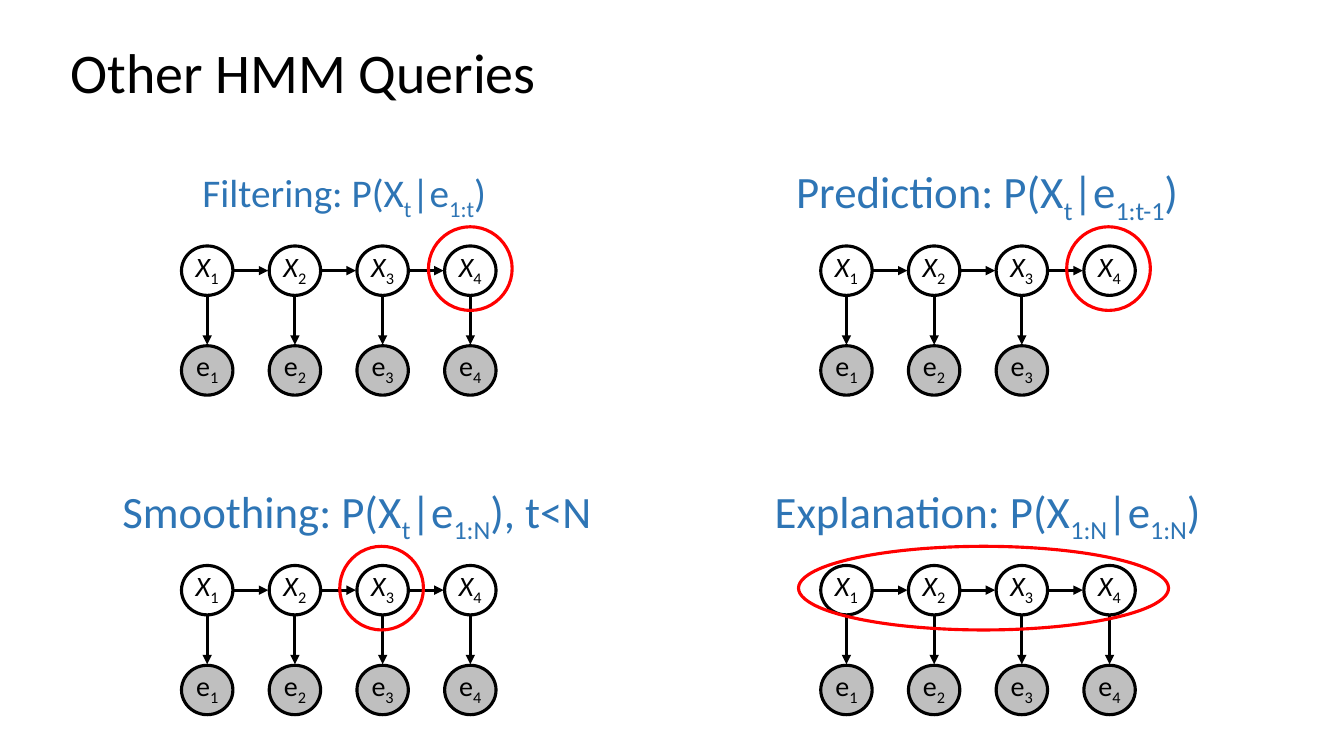
from lxml import etree
from pptx import Presentation
from pptx.dml.color import RGBColor
from pptx.enum.shapes import MSO_CONNECTOR, MSO_SHAPE
from pptx.enum.text import MSO_ANCHOR, PP_ALIGN
from pptx.oxml.ns import qn
from pptx.util import Inches, Pt

COLORS = {"black": "000000", "white": "FFFFFF", "gray": "BFBFBF",
          "blue": "2E75B5", "red": "FF0000"}
FONT = "Calibri"
LINE_WIDTH = Pt(2.25)

# Hidden Markov chain geometry, in inches
NODE_WIDTH, NODE_HEIGHT = 0.51, 0.49
STEP_X, STEP_Y = 0.87, 0.99
ARROW_GAP = 0.01
CHAIN_LENGTH = 4
CHAIN_LEFTS = (1.8, 8.14)
CHAIN_TOPS = (2.44, 5.61)
RING_SIZE = 0.83


def color(name):
    return RGBColor.from_string(COLORS[name])


def write_text(frame, text, size, fill="black", align=PP_ALIGN.CENTER,
               anchor=MSO_ANCHOR.TOP, spacing=None, italic_first=False):
    """Fill a text frame; parts between underscores become subscripts."""
    frame.vertical_anchor = anchor
    paragraph = frame.paragraphs[0]
    paragraph.alignment = align
    if spacing:
        paragraph.line_spacing = spacing
    for index, part in enumerate(text.split("_")):
        if not part:
            continue
        run = paragraph.add_run()
        run.text = part
        run.font.name = FONT
        run.font.size = Pt(size)
        run.font.color.rgb = color(fill)
        run.font.italic = italic_first and index == 0
        if index % 2:
            run.font._element.set("baseline", "-25000")


def add_label(slide, box, text, size, **text_format):
    shape = slide.shapes.add_textbox(*map(Inches, box))
    shape.text_frame.word_wrap = True
    write_text(shape.text_frame, text, size, **text_format)


def add_ellipse(shapes, box, line, fill=None):
    shape = shapes.add_shape(MSO_SHAPE.OVAL, *map(Inches, box))
    shape.shadow.inherit = False
    shape.line.color.rgb = color(line)
    shape.line.width = LINE_WIDTH
    if fill:
        shape.fill.solid()
        shape.fill.fore_color.rgb = color(fill)
    else:
        shape.fill.background()
    return shape


def add_node(shapes, left, top, text, fill, italic):
    node = add_ellipse(shapes, (left, top, NODE_WIDTH, NODE_HEIGHT), "black", fill)
    frame = node.text_frame
    frame.word_wrap = False
    frame.margin_top, frame.margin_bottom = 0, Inches(0.05)
    write_text(frame, text, 20, anchor=MSO_ANCHOR.MIDDLE, italic_first=italic)


def add_arrow(shapes, *ends):
    arrow = shapes.add_connector(MSO_CONNECTOR.STRAIGHT, *map(Inches, ends))
    arrow.line.color.rgb = color("black")
    arrow.line.width = LINE_WIDTH
    etree.SubElement(arrow.line._get_or_add_ln(), qn("a:tailEnd"), type="triangle")
    etree.SubElement(arrow._element.spPr, qn("a:effectLst"))


def add_chain(slide, left, top, evidence_count=CHAIN_LENGTH):
    """Draw states X1..X4 in a row with their evidence nodes below."""
    shapes = slide.shapes.add_group_shape().shapes
    middle_y = top + NODE_HEIGHT / 2
    for index in range(CHAIN_LENGTH):
        x = left + index * STEP_X
        middle_x = x + NODE_WIDTH / 2
        add_node(shapes, x, top, f"X_{index + 1}_", "white", True)
        if index < CHAIN_LENGTH - 1:
            add_arrow(shapes, x + NODE_WIDTH + ARROW_GAP, middle_y,
                      x + STEP_X - ARROW_GAP, middle_y)
        if index < evidence_count:
            add_node(shapes, x, top + STEP_Y, f"e_{index + 1}_", "gray", False)
            add_arrow(shapes, middle_x, top + NODE_HEIGHT + ARROW_GAP,
                      middle_x, top + STEP_Y - ARROW_GAP)


def main():
    presentation = Presentation()
    presentation.slide_width = Inches(13.33)
    presentation.slide_height = Inches(7.5)
    slide = presentation.slides.add_slide(presentation.slide_layouts[6])

    # Title
    add_label(slide, (0.6, 0.4, 11.5, 0.69), "Other HMM Queries", 40,
              align=PP_ALIGN.LEFT, anchor=MSO_ANCHOR.MIDDLE, spacing=0.9)

    # Chains: only the prediction query lacks its last evidence node
    for row, top in enumerate(CHAIN_TOPS):
        for column, left in enumerate(CHAIN_LEFTS):
            is_prediction = (row, column) == (0, 1)
            add_chain(slide, left, top, CHAIN_LENGTH - is_prediction)

    # Query headings
    add_label(slide, (1.5, 1.58, 3.83, 0.67), "Filtering: P(X_t_|e_1:t_)", 28,
              fill="blue", anchor=MSO_ANCHOR.MIDDLE, spacing=0.9)
    for box, text in (
        ((7.58, 1.58, 4.42, 0.67), "Prediction: P(X_t_|e_1:t-1_)"),
        ((1, 4.75, 5.08, 0.67), "Smoothing: P(X_t_|e_1:N_), t<N"),
        ((7.17, 4.75, 5.25, 0.67), "Explanation: P(X_1:N_|e_1:N_)"),
    ):
        add_label(slide, box, text, 32, fill="blue")

    # Rings around the queried states
    for left, top, width in ((4.25, 2.25, RING_SIZE), (10.58, 2.25, RING_SIZE),
                             (3.37, 5.42, RING_SIZE), (7.92, 5.42, 3.67)):
        add_ellipse(slide.shapes, (left, top, width, RING_SIZE), "red")

    presentation.save("out.pptx")


if __name__ == "__main__":
    main()
